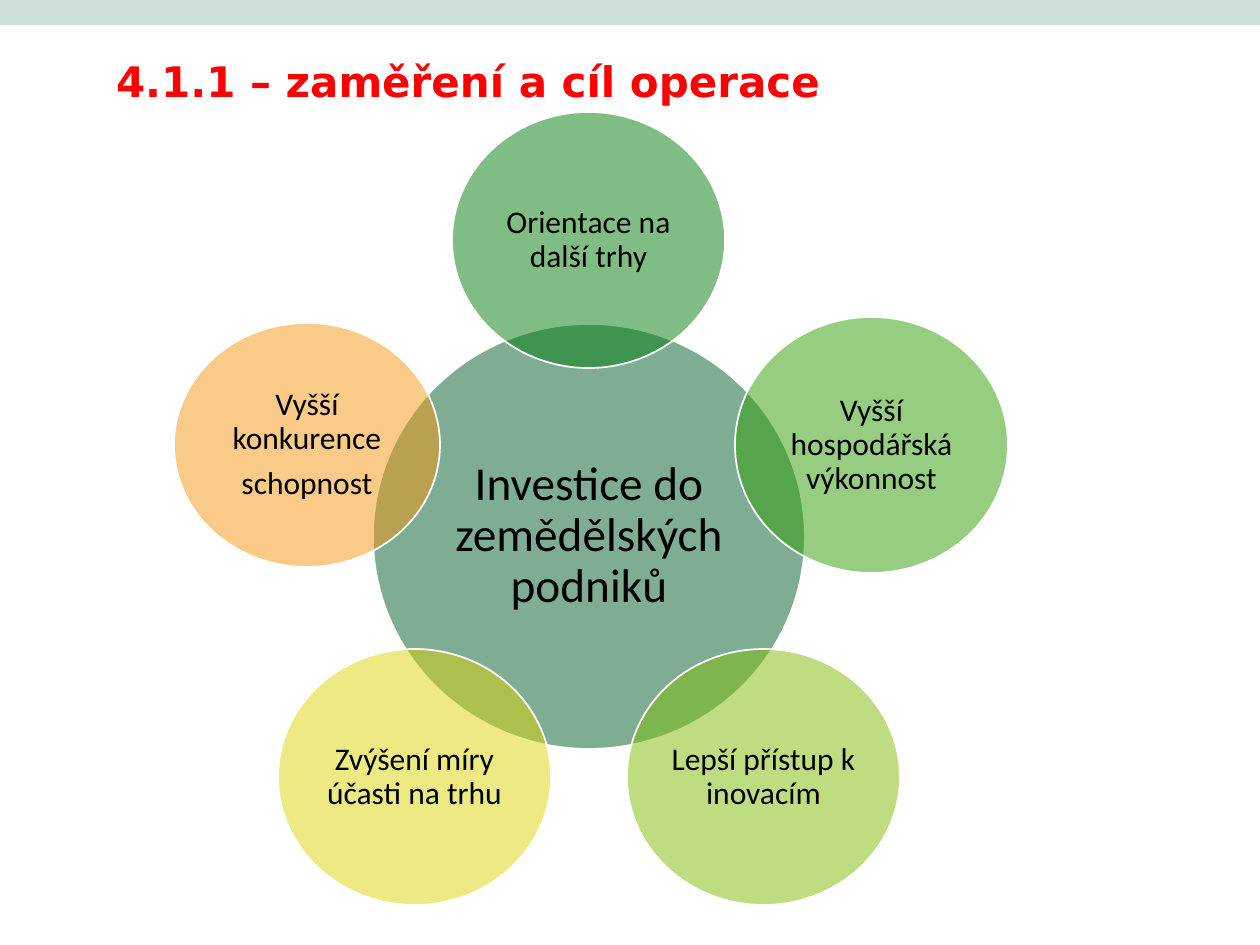
"""Build a slide with the investment goal ringed by its five benefits."""
import math
from dataclasses import dataclass

import pptx
import pptx.dml.color
import pptx.enum.shapes
import pptx.enum.text
import pptx.oxml
import pptx.oxml.ns
import pptx.slide
import pptx.util

EMU_PER_PX = 914400 // 126
SLIDE_WIDTH, SLIDE_HEIGHT = 1260, 945
CENTRE_X, CENTRE_Y = 589, 537
ORBIT = 297


@dataclass(frozen=True)
class Theme:
    title_font: str = "DejaVu Sans"
    body_font: str = "Calibri"
    title_size: int = 24
    goal_size: int = 27
    benefit_size: int = 18
    title: str = "FF0000"
    text: str = "000000"
    outline: str = "FFFFFF"
    band: str = "CCDFD8"
    goal: str = "005C2B"
    opacity: int = 50


@dataclass(frozen=True)
class Circle:
    text: str
    color: str
    width: int = 273
    height: int = 256
    size: int = 18
    inset: int = 4


THEME = Theme()
GOAL = Circle("Investice do zemědělských podniků", THEME.goal, 432, 425, THEME.goal_size, 5)
BENEFITS = [
    Circle("Orientace na další trhy", "017D0C", size=THEME.benefit_size),
    Circle("Vyšší hospodářská výkonnost", "2F9D03", size=THEME.benefit_size),
    Circle("Lepší přístup k inovacím", "7EBD05", size=THEME.benefit_size),
    Circle("Zvýšení míry účasti na trhu", "DCD408", size=THEME.benefit_size),
    Circle("Vyšší konkurence\nschopnost", "F49712", 266, 244, THEME.benefit_size),
]


def px(length: float) -> pptx.util.Emu:
    return pptx.util.Emu(round(length) * EMU_PER_PX)


def rgb(color: str) -> pptx.dml.color.RGBColor:
    return pptx.dml.color.RGBColor.from_string(color)


def set_insets(frame, horizontal: int, vertical: int) -> None:
    frame.margin_left = frame.margin_right = px(horizontal)
    frame.margin_top = frame.margin_bottom = px(vertical)


def style_font(font, name: str, size: int, color: str) -> None:
    font.name = name
    font.size = pptx.util.Pt(size)
    font.color.rgb = rgb(color)


def add_band(slide: pptx.slide.Slide) -> None:
    band = slide.shapes.add_shape(
        pptx.enum.shapes.MSO_SHAPE.RECTANGLE, 0, 0, px(SLIDE_WIDTH), px(25))
    band.shadow.inherit = False
    band.fill.solid()
    band.fill.fore_color.rgb = rgb(THEME.band)
    band.line.fill.background()


def add_title(slide: pptx.slide.Slide, text: str) -> None:
    frame = slide.shapes.add_textbox(px(98), px(43), px(752), px(74)).text_frame
    frame.word_wrap = True
    frame.vertical_anchor = pptx.enum.text.MSO_ANCHOR.BOTTOM
    set_insets(frame, 18, 11)
    frame.text = text
    font = frame.paragraphs[0].runs[0].font
    style_font(font, THEME.title_font, THEME.title_size, THEME.title)
    font.bold = True


def add_circle(slide: pptx.slide.Slide, circle: Circle, x: float, y: float) -> None:
    ellipse = slide.shapes.add_shape(
        pptx.enum.shapes.MSO_SHAPE.OVAL,
        px(x - circle.width / 2), px(y - circle.height / 2),
        px(circle.width), px(circle.height))
    ellipse.shadow.inherit = False
    ellipse.fill.solid()
    ellipse.fill.fore_color.rgb = rgb(circle.color)
    fill_color = ellipse.fill._xPr.find(".//" + pptx.oxml.ns.qn("a:srgbClr"))
    alpha = pptx.oxml.parse_xml(
        f'<a:alpha {pptx.oxml.ns.nsdecls("a")} val="{THEME.opacity * 1000}"/>')
    fill_color.append(alpha)
    ellipse.line.color.rgb = rgb(THEME.outline)
    ellipse.line.width = pptx.util.Pt(1)

    frame = ellipse.text_frame
    frame.word_wrap = True
    frame.vertical_anchor = pptx.enum.text.MSO_ANCHOR.MIDDLE
    set_insets(frame, circle.inset, circle.inset)
    frame.text = circle.text
    for paragraph in frame.paragraphs:
        paragraph.alignment = pptx.enum.text.PP_ALIGN.CENTER
        paragraph.line_spacing = 0.9
        paragraph.space_after = pptx.util.Pt(round(circle.size * 0.35, 1))
        for run in paragraph.runs:
            style_font(run.font, THEME.body_font, circle.size, THEME.text)


def main() -> None:
    deck = pptx.Presentation()
    deck.slide_width, deck.slide_height = px(SLIDE_WIDTH), px(SLIDE_HEIGHT)
    slide = deck.slides.add_slide(deck.slide_layouts[6])
    add_band(slide)
    add_title(slide, "4.1.1 – zaměření a cíl operace")
    add_circle(slide, GOAL, CENTRE_X, CENTRE_Y)
    for index, benefit in enumerate(BENEFITS):
        angle = math.tau * index / len(BENEFITS)
        add_circle(slide, benefit,
                   CENTRE_X + ORBIT * math.sin(angle),
                   CENTRE_Y - ORBIT * math.cos(angle))
    deck.save("out.pptx")


if __name__ == "__main__":
    main()
